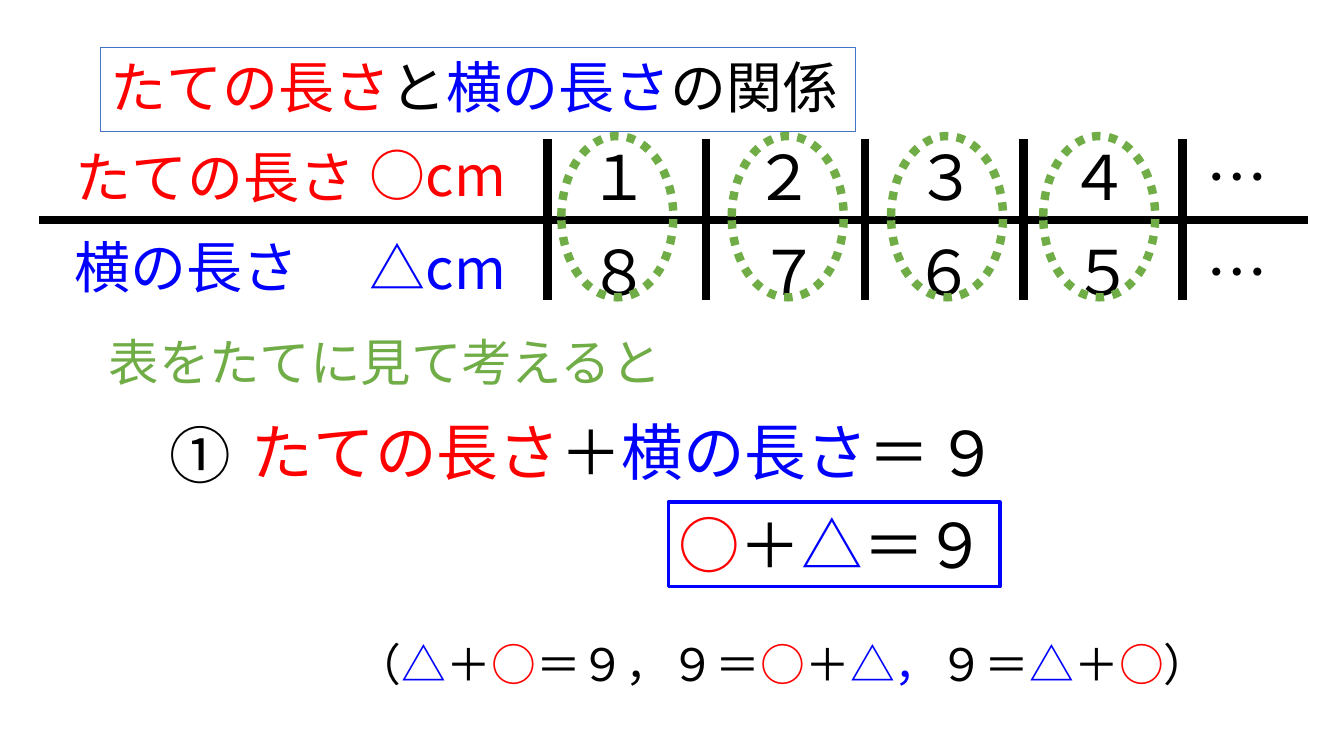
"""Build a slide relating height and width through a table read column by column."""
from lxml import etree
from pptx import Presentation
from pptx.dml.color import RGBColor
from pptx.enum import dml, shapes, text
from pptx.oxml import ns
from pptx.util import Pt

FONT = "Noto Sans CJK JP"
RED, BLUE, BLACK, GREEN = "FF0000", "0000FF", "000000", "70AD47"


def color(value):
    return RGBColor.from_string(value)


def write(shape, size, pieces):
    frame = shape.text_frame
    frame.word_wrap = False
    frame.auto_size = text.MSO_AUTO_SIZE.SHAPE_TO_FIT_TEXT
    frame.vertical_anchor = text.MSO_ANCHOR.TOP
    paragraph = frame.paragraphs[0]
    paragraph.alignment = text.PP_ALIGN.LEFT
    for words, fill in pieces:
        run = paragraph.add_run()
        run.text = words
        run.font.size = Pt(size)
        run.font.color.rgb = color(fill)
        run.font.name = FONT
        east_asian = etree.SubElement(run.font._element, ns.qn("a:ea"))
        east_asian.set("typeface", FONT)


presentation = Presentation()
presentation.slide_width, presentation.slide_height = Pt(960), Pt(540)
slide = presentation.slides.add_slide(presentation.slide_layouts[5])

title = slide.shapes.title
title.left, title.top, title.width, title.height = Pt(72), Pt(34), Pt(539.3), Pt(55.7)
title.line.color.rgb = color("4472C4")
title.line.width = Pt(0.75)
write(title, 40, [("たての長さ", RED), ("と", BLACK), ("横の長さ", BLUE), ("の関係", BLACK)])

grid_lines = [(28, 157, 934, 157)]
grid_lines += [(391 + 113.4 * column, 99.5, 391 + 113.4 * column, 214) for column in range(5)]
for ends in grid_lines:
    line = slide.shapes.add_connector(shapes.MSO_CONNECTOR.STRAIGHT, *map(Pt, ends))
    line.line.color.rgb = color(BLACK)
    line.line.width = Pt(6)
    etree.SubElement(line._element.spPr, ns.qn("a:effectLst"))

labels = [
    (46.8, 98.6, 216.7, 40, [("たての長さ", RED)]),
    (46.1, 162.7, 176.4, 40, [("横の長さ", BLUE)]),
    (257, 97.2, 112.3, 40, [("○cm", RED)]),
    (257, 163.4, 112.3, 40, [("△cm", BLUE)]),
    (70.6, 232.6, 414.7, 36, [("表をたてに見て考えると", GREEN)]),
    (113.8, 294.5, 59, 44, [("①", BLACK)]),
    (172.8, 292.3, 503.3, 44,
     [("たての長さ", RED), ("＋", BLACK), ("横の長さ", BLUE), ("＝", BLACK)]),
    (661.7, 293, 59, 44, [("９", BLACK)]),
]
table_rows = [
    (95.8, "１２３４…", (413.3, 531.4, 646.6, 756, 854.6)),
    (163.4, "８７６５…", (413.3, 535, 645.1, 758.9, 854.6)),
]
for top, digits, lefts in table_rows:
    labels += [(left, top, 59, 44, [(digit, BLACK)]) for digit, left in zip(digits, lefts)]
for left, top, width, size, pieces in labels:
    label = slide.shapes.add_textbox(Pt(left), Pt(top), Pt(width), Pt(size * 1.2 + 7.4))
    write(label, size, pieces)

variants = slide.shapes.add_textbox(Pt(247.7), Pt(451.4), Pt(626.4), Pt(46))
write(variants, 32, [
    ("（", BLACK), ("△", BLUE), ("＋", BLACK), ("○", RED), ("＝９，９＝", BLACK),
    ("○", RED), ("＋", BLACK), ("△，", BLUE), ("９＝", BLACK),
    ("△", BLUE), ("＋", BLACK), ("○", RED), ("）", BLACK),
])
variants.text_frame.word_wrap = True

for left in (401, 522.7, 636.5, 745.2):
    ring = slide.shapes.add_shape(
        shapes.MSO_SHAPE.OVAL, Pt(left), Pt(97.2), Pt(80), Pt(115.2))
    ring.shadow.inherit = False
    ring.fill.background()
    ring.line.color.rgb = color(GREEN)
    ring.line.width = Pt(6)
    ring.line.dash_style = dml.MSO_LINE.ROUND_DOT

formula = slide.shapes.add_shape(
    shapes.MSO_SHAPE.RECTANGLE, Pt(477.4), Pt(358.6), Pt(236.9), Pt(60.5))
formula.shadow.inherit = False
formula.fill.background()
formula.line.color.rgb = color(BLUE)
formula.line.width = Pt(2.25)
write(formula, 44, [("○", RED), ("＋", BLACK), ("△", BLUE), ("＝９", BLACK)])

presentation.save("out.pptx")
